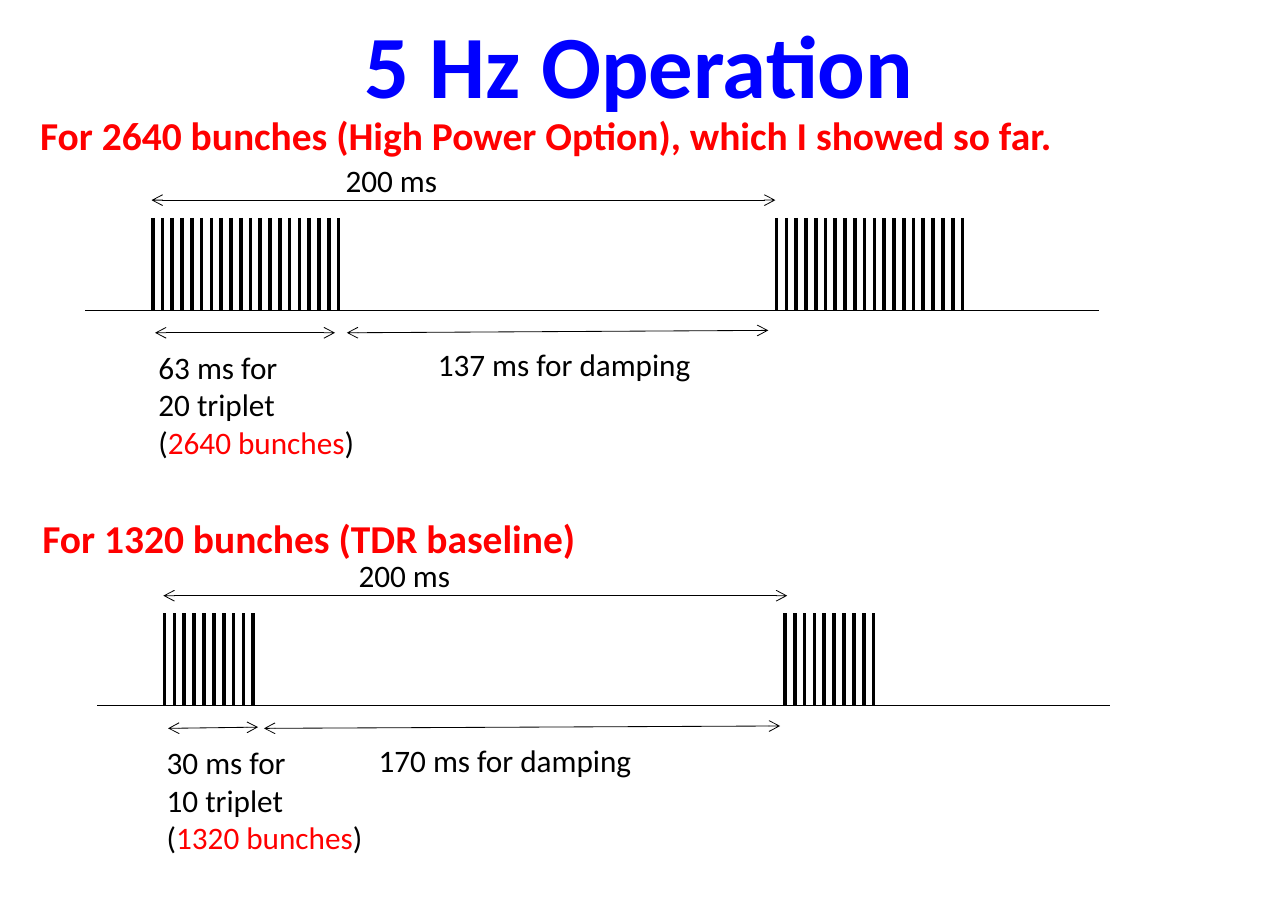
from pptx import Presentation
from pptx.dml.color import RGBColor
from pptx.enum.shapes import MSO_CONNECTOR as CONN
from pptx.enum.text import MSO_ANCHOR as ANCHOR, PP_ALIGN as ALIGN
from pptx.oxml.ns import qn
from pptx.util import Inches, Pt
from lxml.etree import SubElement

BLACK, RED, BLUE = "000000", "FF0000", "0000FF"


def add_line(shapes, x1, y1, x2, y2, width, arrows=False):
    c = shapes.add_connector(CONN.STRAIGHT, Inches(x1), Inches(y1), Inches(x2), Inches(y2))
    c.line.width = Pt(width)
    c.line.color.rgb = RGBColor.from_string(BLACK)
    if arrows:
        ln = c.line._get_or_add_ln()
        for end in ("a:headEnd", "a:tailEnd"):
            SubElement(ln, qn(end), type="arrow")
    SubElement(c._element.spPr, qn("a:effectLst"))


def add_text(shapes, x, y, w, h, lines, size=19, bold=False, wrap=False):
    """Each line is a list of (text, colour) runs."""
    tf = shapes.add_textbox(Inches(x), Inches(y), Inches(w), Inches(h)).text_frame
    tf.word_wrap = wrap
    for i, runs in enumerate(lines):
        p = tf.paragraphs[0] if i == 0 else tf.add_paragraph()
        p.font.name, p.font.size, p.font.bold = "Calibri", Pt(size), bold
        for text, colour in runs:
            r = p.add_run()
            r.text = text
            r.font.color.rgb = RGBColor.from_string(colour)


prs = Presentation()
prs.slide_width, prs.slide_height = Inches(10.88), Inches(7.76)
s = prs.slides.add_slide(prs.slide_layouts[5])
shapes = s.shapes

# Title
title = shapes.title
title.left, title.top = Inches(-0.18), Inches(0.03)
title.width, title.height = Inches(11.33), Inches(1.02)
tf = title.text_frame
tf.text = "5 Hz Operation "
tf.vertical_anchor = ANCHOR.TOP
p = tf.paragraphs[0]
p.alignment = ALIGN.CENTER
p.font.name, p.font.size, p.font.bold = "Calibri", Pt(54), True
p.font.color.rgb = RGBColor.from_string(BLUE)

# Timing diagrams: heading, pulse trains, and x positions of labels and arrows
diagrams = [
    dict(heading="For 2640 bunches (High Power Option), which I showed so far.",
         heading_box=(0.24, 0.89, 10.12, 0.5), axis_x=0.72, axis_y=2.62,
         pulses=20, trains=[(1.29, 2.86), (6.56, 8.13)],
         train_ms=63, train_arrow=(1.31, 2.81, 2.83, 2.81), train_x=1.24,
         damping_ms=137, damping_arrow=(2.93, 2.81, 6.49, 2.79), damping_x=3.6,
         bunches="2640 bunches", period_x=2.82),
    dict(heading="For 1320 bunches (TDR baseline)",
         heading_box=(0.26, 4.29, 4.96, 0.5), axis_x=0.82, axis_y=5.96,
         pulses=10, trains=[(1.39, 2.14), (6.63, 7.38)],
         train_ms=30, train_arrow=(1.42, 6.15, 2.18, 6.14), train_x=1.31,
         damping_ms=170, damping_arrow=(2.23, 6.15, 6.59, 6.13), damping_x=3.1,
         bunches="1320 bunches", period_x=2.93),
]

for d in diagrams:
    y, n = d["axis_y"], d["pulses"]
    add_text(shapes, *d["heading_box"], [[(d["heading"], RED)]], 24, True, True)

    # Time axis and pulse trains
    add_line(shapes, d["axis_x"], y, d["axis_x"] + 8.56, y, 0.75)
    for first, last in d["trains"]:
        train = shapes.add_group_shape()
        for i in range(n):
            x = first + i * (last - first) / (n - 1)
            add_line(train.shapes, x, y - 0.78, x, y, 2.25)

    # Repetition period
    start = d["trains"][0][0] - 0.01
    add_line(shapes, start, y - 0.93, start + 5.27, y - 0.93, 0.5, True)
    add_text(shapes, d["period_x"], y - 1.31, 0.99, 0.42, [[("200 ms", BLACK)]])

    # Train length
    add_line(shapes, *d["train_arrow"], 0.5, True)
    add_text(shapes, d["train_x"], y + 0.27, 1.87, 1.06, [
        [(f"{d['train_ms']} ms for", BLACK)],
        [(f"{n} triplet", BLACK)],
        [("(", BLACK), (d["bunches"], RED), (")", BLACK)],
    ])

    # Damping time
    add_line(shapes, *d["damping_arrow"], 0.5, True)
    add_text(shapes, d["damping_x"], y + 0.25, 2.36, 0.42,
             [[(f"{d['damping_ms']} ms for damping", BLACK)]])

prs.save("out.pptx")
